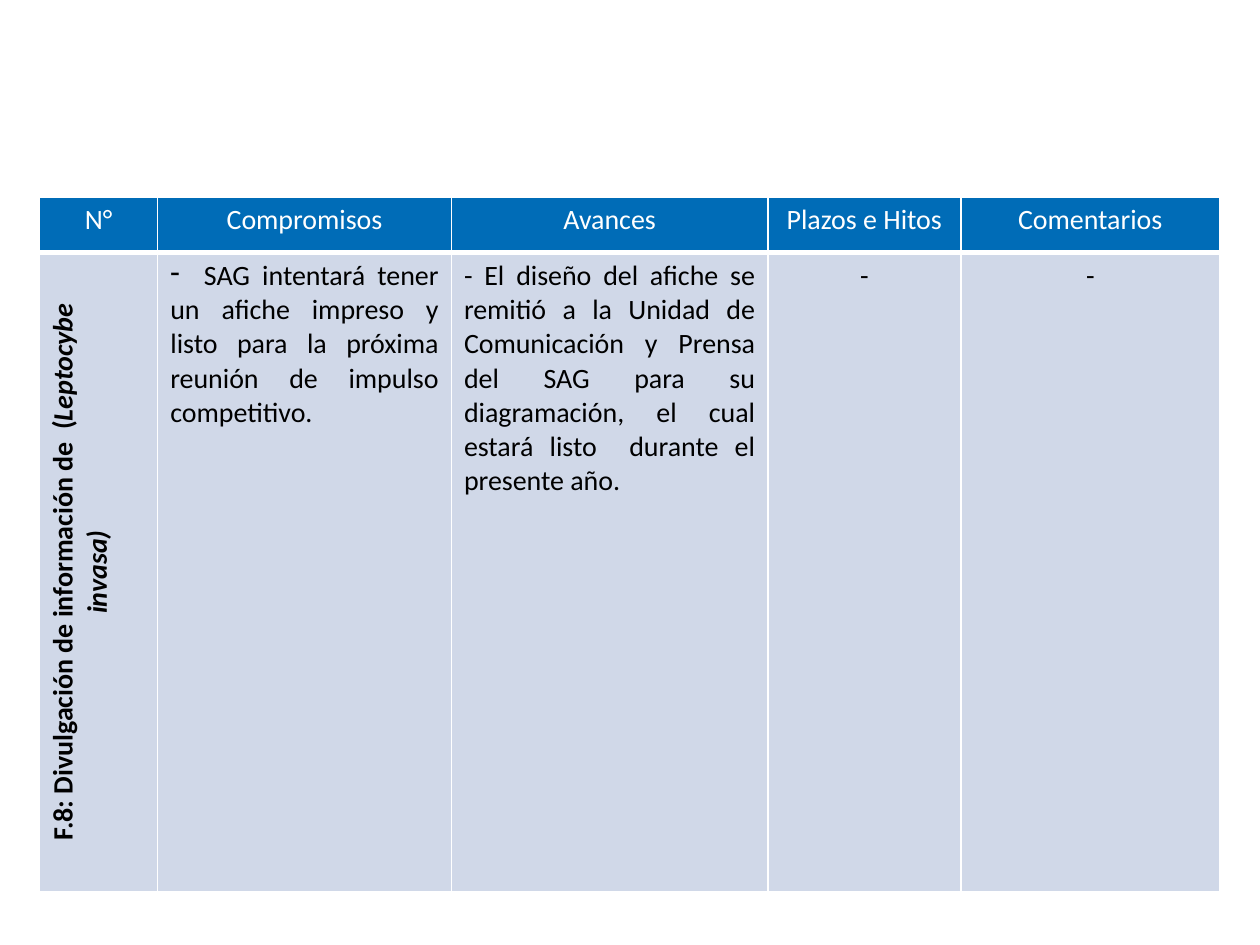
from lxml import etree
from pptx import Presentation
from pptx.dml.color import RGBColor
from pptx.enum.text import PP_ALIGN
from pptx.oxml.ns import qn
from pptx.util import Cm, Pt

CENTER, JUSTIFY = PP_ALIGN.CENTER, PP_ALIGN.JUSTIFY
WHITE = RGBColor(0xFF, 0xFF, 0xFF)
BLACK = RGBColor(0, 0, 0)
BLUE = RGBColor(0x00, 0x6C, 0xB7)
PALE_BLUE = RGBColor(0xD0, 0xD8, 0xE8)

COLUMN_WIDTHS = [2.38, 5.92, 6.38, 3.89, 5.22]
ROW_HEIGHTS = [1.12, 9.04]
HEADINGS = ["N°", "Compromisos", "Avances", "Plazos e Hitos", "Comentarios"]
# Each body cell: alignment and runs of (text, bold, italic)
BODY = [
    (CENTER, [("F.8: Divulgación de información de  (", True, False),
              ("Leptocybe invasa)", True, True)]),
    (JUSTIFY, [("  SAG intentará tener un afiche impreso y listo para la próxima "
                "reunión de impulso competitivo. ", False, False)]),
    (JUSTIFY, [("- El diseño del afiche se remitió a la Unidad de Comunicación y "
                "Prensa del SAG para su diagramación, el cual estará listo  "
                "durante el presente año. ", False, False)]),
    (CENTER, [("-", False, False)]),
    (CENTER, [("-", False, False)]),
]


def set_borders(cell, bottom_width):
    """Draw white borders, 1 pt on all sides but the bottom; call before the fill."""
    properties = cell._tc.get_or_add_tcPr()
    for side, width in (("L", 1), ("R", 1), ("T", 1), ("B", bottom_width)):
        line = etree.SubElement(properties, qn("a:ln" + side), w=str(Pt(width)))
        fill = etree.SubElement(line, qn("a:solidFill"))
        etree.SubElement(fill, qn("a:srgbClr"), val=str(WHITE))


def fill_cell(cell, alignment, runs, text_color, fill_color, bottom_width):
    set_borders(cell, bottom_width)
    cell.fill.solid()
    cell.fill.fore_color.rgb = fill_color
    paragraph = cell.text_frame.paragraphs[0]
    paragraph.alignment = alignment
    for text, bold, italic in runs:
        run = paragraph.add_run()
        run.text = text
        run.font.name = "Calibri"
        run.font.size = Pt(16)
        run.font.bold = bold
        run.font.italic = italic
        run.font.color.rgb = text_color


presentation = Presentation()
presentation.slide_width = Cm(25.4)
presentation.slide_height = Cm(19.05)
slide = presentation.slides.add_slide(presentation.slide_layouts[6])

table_shape = slide.shapes.add_table(2, len(HEADINGS), Cm(0.8), Cm(3.97),
                                     Cm(23.8), Cm(10.67))
table = table_shape.table
for column, width in zip(table.columns, COLUMN_WIDTHS):
    column.width = Cm(width)
for row, height in zip(table.rows, ROW_HEIGHTS):
    row.height = Cm(height)
table_shape.height = Cm(10.67)

for index, heading in enumerate(HEADINGS):
    fill_cell(table.cell(0, index), CENTER, [(heading, False, False)], WHITE, BLUE, 3)
for index, (alignment, runs) in enumerate(BODY):
    fill_cell(table.cell(1, index), alignment, runs, BLACK, PALE_BLUE, 1)

# The topic reads upwards; the commitment is a dash bullet
table.cell(1, 0)._tc.get_or_add_tcPr().set("vert", "vert270")
commitment = table.cell(1, 1).text_frame.paragraphs[0]._p.get_or_add_pPr()
etree.SubElement(commitment, qn("a:buFontTx"))
etree.SubElement(commitment, qn("a:buChar"), char="-")

presentation.save("out.pptx")
